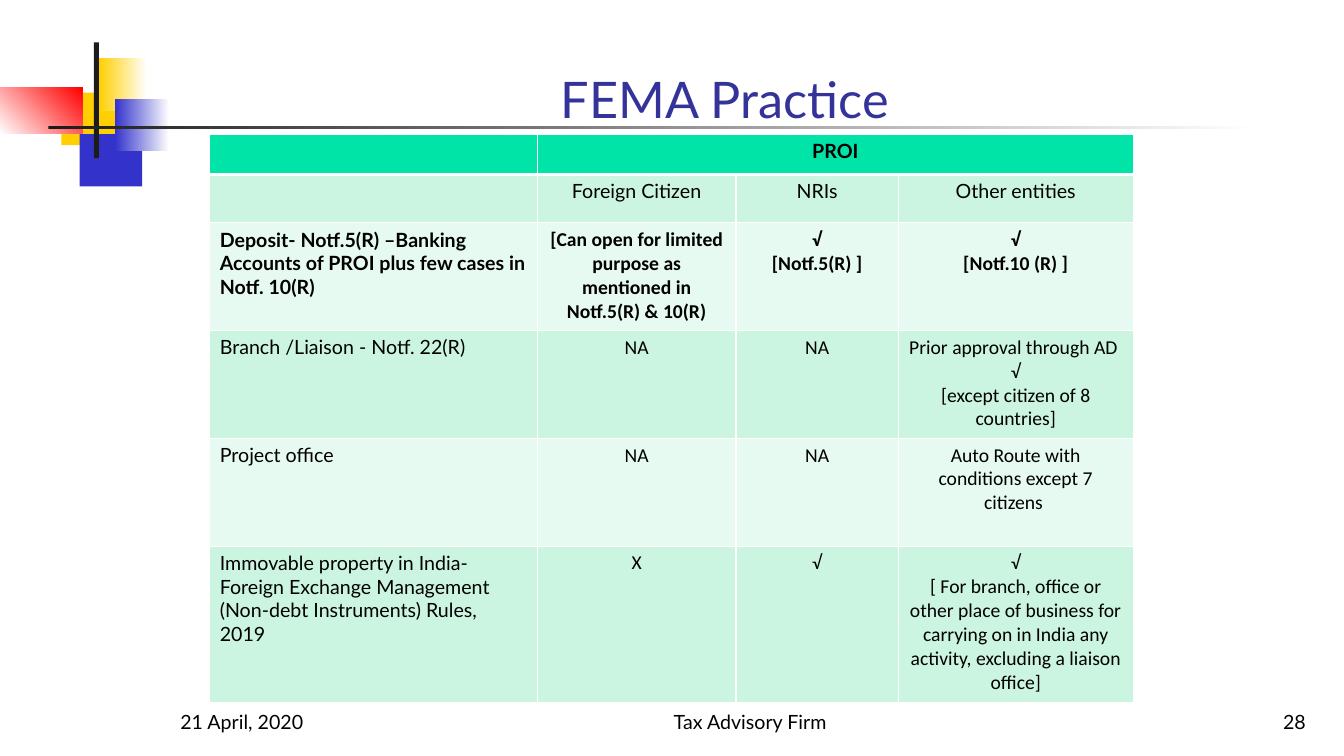
from dataclasses import dataclass

from lxml.etree import SubElement
from pptx import Presentation
from pptx.dml.color import RGBColor
from pptx.enum.shapes import MSO_SHAPE
from pptx.enum.text import MSO_ANCHOR, PP_ALIGN
from pptx.oxml.ns import qn
from pptx.util import Inches, Pt


@dataclass(frozen=True)
class Theme:
    black: str = "000000"
    white: str = "FFFFFF"
    title: str = "333399"
    gold: str = "FFCF01"
    blue: str = "3333CC"
    red: str = "FF0000"
    ink: str = "1C1C1C"
    head: str = "00E4A8"
    bands: tuple = ("CCF5E1", "E7FAF1")
    face: str = "Lato"
    body: str = "Calibri"
    big: int = 36
    small: int = 14


THEME = Theme()
LEFT, MID, RIGHT = PP_ALIGN.LEFT, PP_ALIGN.CENTER, PP_ALIGN.RIGHT
COLS = (3.25, 1.97, 1.61, 2.33)
ROWS = (0.39, 0.48, 1.07, 1.07, 1.07, 1.55)
CELLS = (
    ("", "PROI", "", ""),
    ("", "Foreign Citizen", "NRIs", "Other entities"),
    ("Deposit- Notf.5(R) –Banking Accounts of PROI plus few cases in Notf. 10(R)",
     "[Can open for limited purpose as mentioned in Notf.5(R) & 10(R)",
     "√\n[Notf.5(R) ]", "√\n[Notf.10 (R) ]"),
    ("Branch /Liaison - Notf. 22(R)", "NA", "NA",
     "Prior approval through AD \n√\n[except citizen of 8 countries]"),
    ("Project office", "NA", "NA",
     "Auto Route with\nconditions except 7 citizens "),
    ("Immovable property in India- Foreign Exchange Management "
     "(Non-debt Instruments) Rules, 2019", "X", "√",
     "√\n[ For branch, office or other place of business for carrying on "
     "in India any activity, excluding a liaison office]"),
)


def write(frame, text, size=THEME.small, face=THEME.face, color=THEME.black,
          bold=False, align=LEFT):
    """Fill a text frame, one paragraph for each line."""
    frame.word_wrap = True
    for i, line in enumerate(text.split("\n")):
        para = frame.paragraphs[0] if i == 0 else frame.add_paragraph()
        para.alignment = align
        run = para.add_run()
        run.text = line
        font = run.font
        font.size, font.name, font.bold = Pt(size), face, bold
        font.color.rgb = RGBColor.from_string(color)


def label(slide, box, text, **form):
    """Add a text box that rests on its bottom edge."""
    shape = slide.shapes.add_textbox(*map(Inches, box))
    shape.text_frame.vertical_anchor = MSO_ANCHOR.BOTTOM
    write(shape.text_frame, text, **form)


def block(slide, box, color, end=None, angle=0):
    """Add a borderless block, plain or fading from color to end."""
    shape = slide.shapes.add_shape(MSO_SHAPE.RECTANGLE, *map(Inches, box))
    shape.shadow.inherit = False
    shape.line.fill.background()
    if end is None:
        shape.fill.solid()
        shape.fill.fore_color.rgb = RGBColor.from_string(color)
        return
    shape.fill.gradient()
    shape.fill.gradient_angle = angle
    for stop, tone, place in zip(shape.fill.gradient_stops, (color, end), (0, 1)):
        stop.color.rgb = RGBColor.from_string(tone)
        stop.position = place


def emblem(slide, x, y):
    """Draw the coloured blocks and crossing bars."""
    t = THEME
    parts = (
        ((0.61, 0.5, 0.64, 0.52), t.gold),
        ((0.79, 0.91, 0.62, 0.52), t.blue),
        ((0.98, 0.16, 0.48, 0.52), t.gold, t.white),
        ((1.14, 0.56, 0.54, 0.52), t.blue, t.white),
        ((0, 0.45, 0.82, 0.46), t.white, t.red, 45),
        ((0.93, 0, 0.05, 1.15), t.ink),
        ((0.48, 0.83, 12, 0.03), t.ink, t.white),
    )
    for (dx, dy, w, h), *fill in parts:
        block(slide, (x + dx, y + dy, w, h), *fill)


def border(cell, **widths):
    """Draw white cell borders, given the width of each side."""
    props = cell._tc.get_or_add_tcPr()
    for i, side in enumerate("LRTB"):
        line = props.makeelement(qn(f"a:ln{side}"), {"w": str(Pt(widths.get(side, 1)))})
        fill = SubElement(line, qn("a:solidFill"))
        SubElement(fill, qn("a:srgbClr"), val=THEME.white)
        props.insert(i, line)


def grid(slide, x, y):
    """Build the table of rules for each class of person."""
    box = map(Inches, (x, y, sum(COLS), sum(ROWS)))
    table = slide.shapes.add_table(len(ROWS), len(COLS), *box).table
    for col, width in zip(table.columns, COLS):
        col.width = Inches(width)
    for row, height in zip(table.rows, ROWS):
        row.height = Inches(height)
    table.cell(0, 1).merge(table.cell(0, 3))
    for r, texts in enumerate(CELLS):
        for c, text in enumerate(texts):
            cell = table.cell(r, c)
            cell.fill.solid()
            tone = THEME.head if r == 0 else THEME.bands[(r - 1) % 2]
            cell.fill.fore_color.rgb = RGBColor.from_string(tone)
            border(cell, B=3 if r == 0 else 1, T=3 if r == 1 else 1)
            write(cell.text_frame, text, bold=r in (0, 2),
                  face=THEME.body if r > 1 and c else THEME.face,
                  align=MID if c else LEFT)


def footer(slide, x, y):
    """Place the date, the firm and the page number."""
    label(slide, (x, y, 2.78, 0.5), "21 April, 2020")
    label(slide, (x + 3.64, y, 4.22, 0.5), "Tax Advisory Firm", align=MID)
    label(slide, (x + 8.58, y, 2.78, 0.5), "28", align=RIGHT)


def main():
    deck = Presentation()
    deck.slide_width, deck.slide_height = Inches(13.33), Inches(7.5)
    slide = deck.slides.add_slide(deck.slide_layouts[6])
    emblem(slide, 0, 0.42)
    label(slide, (2.93, 0.23, 8.52, 1.1), "FEMA Practice",
          size=THEME.big, color=THEME.title, align=MID)
    grid(slide, 2.08, 1.33)
    footer(slide, 1.69, 6.83)
    deck.save("out.pptx")


if __name__ == "__main__":
    main()
